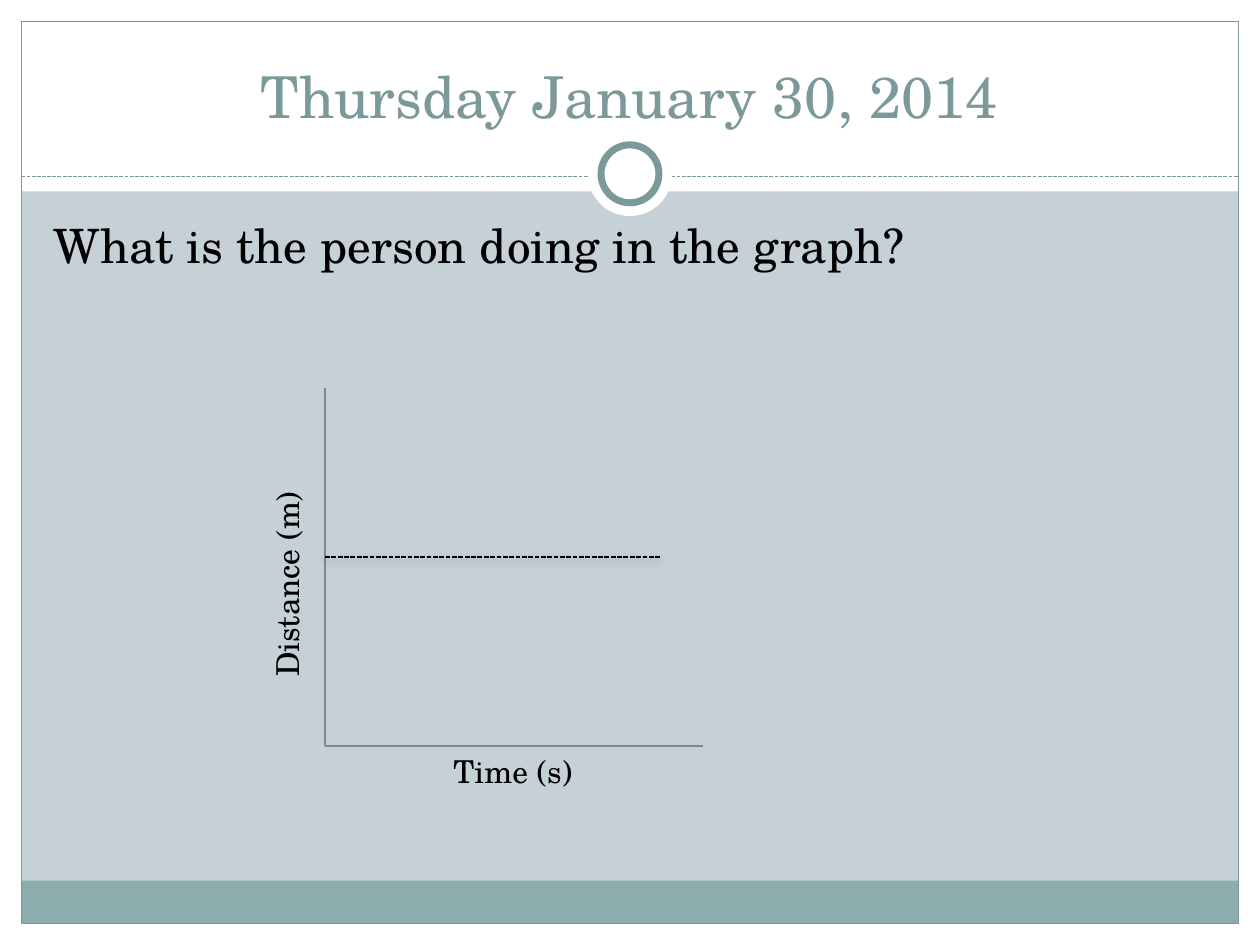
from lxml.etree import SubElement
from pptx import Presentation
from pptx.dml.color import RGBColor
from pptx.enum.dml import MSO_LINE
from pptx.enum.shapes import MSO_CONNECTOR, MSO_SHAPE
from pptx.enum.text import MSO_ANCHOR, MSO_AUTO_SIZE, PP_ALIGN
from pptx.oxml.ns import qn
from pptx.util import Inches, Pt

WHITE = RGBColor(0xFF, 0xFF, 0xFF)
BLACK = RGBColor(0, 0, 0)
BACKDROP = RGBColor(0xC5, 0xD1, 0xD7)
TEAL = RGBColor(0x7C, 0x99, 0x9A)
FOOTER = RGBColor(0x8C, 0xAD, 0xAE)
AXIS = RGBColor(0x7C, 0x8A, 0x8E)
FONT = "TeX Gyre Schola"
WIDTH, HEIGHT, MARGIN = 10, 7.5, 0.17
ORIGIN_X, ORIGIN_Y = 2.58, 5.92


def set_attributes(target, values):
    """Set each named attribute of the target."""
    for name, value in values.items():
        setattr(target, name, value)


def add_panel(slide, box, fill=None, line=None, weight=0.75, kind=MSO_SHAPE.RECTANGLE):
    """Add a flat decorative shape with optional fill and outline."""
    panel = slide.shapes.add_shape(kind, *map(Inches, box))
    panel.shadow.inherit = False
    if fill is None:
        panel.fill.background()
    else:
        panel.fill.solid()
        panel.fill.fore_color.rgb = fill
    if line is None:
        panel.line.fill.background()
    else:
        panel.line.color.rgb = line
        panel.line.width = Pt(weight)


def add_rule(slide, start, end, color, weight=0.75, dash=None):
    """Add a straight line without effects and return its effect list."""
    rule = slide.shapes.add_connector(MSO_CONNECTOR.STRAIGHT, *map(Inches, start + end))
    rule.line.color.rgb = color
    set_attributes(rule.line, {"width": Pt(weight), "dash_style": dash})
    return SubElement(rule._element.spPr, qn("a:effectLst"))


def add_shadow(effects):
    """Put a soft black shadow below a line."""
    shadow = SubElement(effects, qn("a:outerShdw"), blurRad=str(Pt(4)), dist=str(Pt(2)),
                        dir="5400000", rotWithShape="0")
    tint = SubElement(shadow, qn("a:srgbClr"), val=str(BLACK))
    SubElement(tint, qn("a:alpha"), val="35000")


def write_text(holder, wording, size, color=BLACK, frame=None, paragraph=None):
    """Write one formatted paragraph into a text holder."""
    text_frame = holder.text_frame
    text_frame.text = wording
    set_attributes(text_frame, {"word_wrap": True, **(frame or {})})
    set_attributes(text_frame.paragraphs[0], paragraph or {})
    font = text_frame.paragraphs[0].runs[0].font
    set_attributes(font, {"name": FONT, "size": Pt(size), "bold": False})
    font.color.rgb = color


def add_text(slide, box, wording, size, **formats):
    """Add a text box and return it."""
    text_box = slide.shapes.add_textbox(*map(Inches, box))
    write_text(text_box, wording, size, **formats)
    return text_box


def add_frame(slide):
    """Draw the white border, footer band, header rule and ring."""
    for box in ((0, HEIGHT - MARGIN, WIDTH, MARGIN), (0, 0, WIDTH, 1.52),
                (0, 0, MARGIN, HEIGHT), (WIDTH - MARGIN, 0, MARGIN, HEIGHT)):
        add_panel(slide, box, WHITE)
    inner_width = WIDTH - 2 * MARGIN
    add_panel(slide, (MARGIN, 6.99, inner_width, 0.34), FOOTER)
    add_panel(slide, (MARGIN, MARGIN, inner_width, HEIGHT - 2 * MARGIN), line=TEAL)
    add_rule(slide, (MARGIN, 1.4), (WIDTH - MARGIN, 1.4), TEAL, dash=MSO_LINE.SQUARE_DOT)
    for diameter, outline in ((0.67, None), (0.46, TEAL)):
        left, top = WIDTH / 2 - diameter / 2, 1.38 - diameter / 2
        add_panel(slide, (left, top, diameter, diameter), WHITE, outline, 4, MSO_SHAPE.OVAL)


def add_title(slide, wording):
    """Place and format the title in front of the frame."""
    title = slide.shapes.title
    set_attributes(title, {"left": Inches(0.33), "top": Inches(0.25),
                           "width": Inches(9.33), "height": Inches(0.83)})
    write_text(title, wording, 33, TEAL,
               {"vertical_anchor": MSO_ANCHOR.BOTTOM, "auto_size": MSO_AUTO_SIZE.NONE},
               {"alignment": PP_ALIGN.CENTER})
    slide.shapes._spTree.append(title._element)


def add_graph(slide):
    """Draw the distance-time axes, the flat line and the axis labels."""
    origin = (ORIGIN_X, ORIGIN_Y)
    add_rule(slide, (ORIGIN_X, 3.08), origin, AXIS)
    add_rule(slide, origin, (5.58, ORIGIN_Y), AXIS)
    add_shadow(add_rule(slide, (ORIGIN_X, 4.42), (5.25, 4.42), BLACK, 0.9, MSO_LINE.SQUARE_DOT))
    grow = {"auto_size": MSO_AUTO_SIZE.SHAPE_TO_FIT_TEXT}
    add_text(slide, (3.5, ORIGIN_Y, 1.33, 0.4), "Time (s)", 18, frame=grow)
    distance = add_text(slide, (2.08, 3.75, 0.5, 1.72), "Distance (m)", 18, frame=grow)
    distance.text_frame._txBody.bodyPr.set("vert", "vert270")


def main():
    """Build and save the slide."""
    deck = Presentation()
    set_attributes(deck, {"slide_width": Inches(WIDTH), "slide_height": Inches(HEIGHT)})
    slide = deck.slides.add_slide(deck.slide_layouts[5])
    slide.background.fill.solid()
    slide.background.fill.fore_color.rgb = BACKDROP
    add_frame(slide)
    add_title(slide, "Thursday January 30, 2014")
    add_text(slide, (0.33, 1.67, 9.3, 5), "What is the person doing in the graph?", 27,
             paragraph={"space_before": Pt(5.4)})
    add_graph(slide)
    deck.save("out.pptx")


if __name__ == "__main__":
    main()
